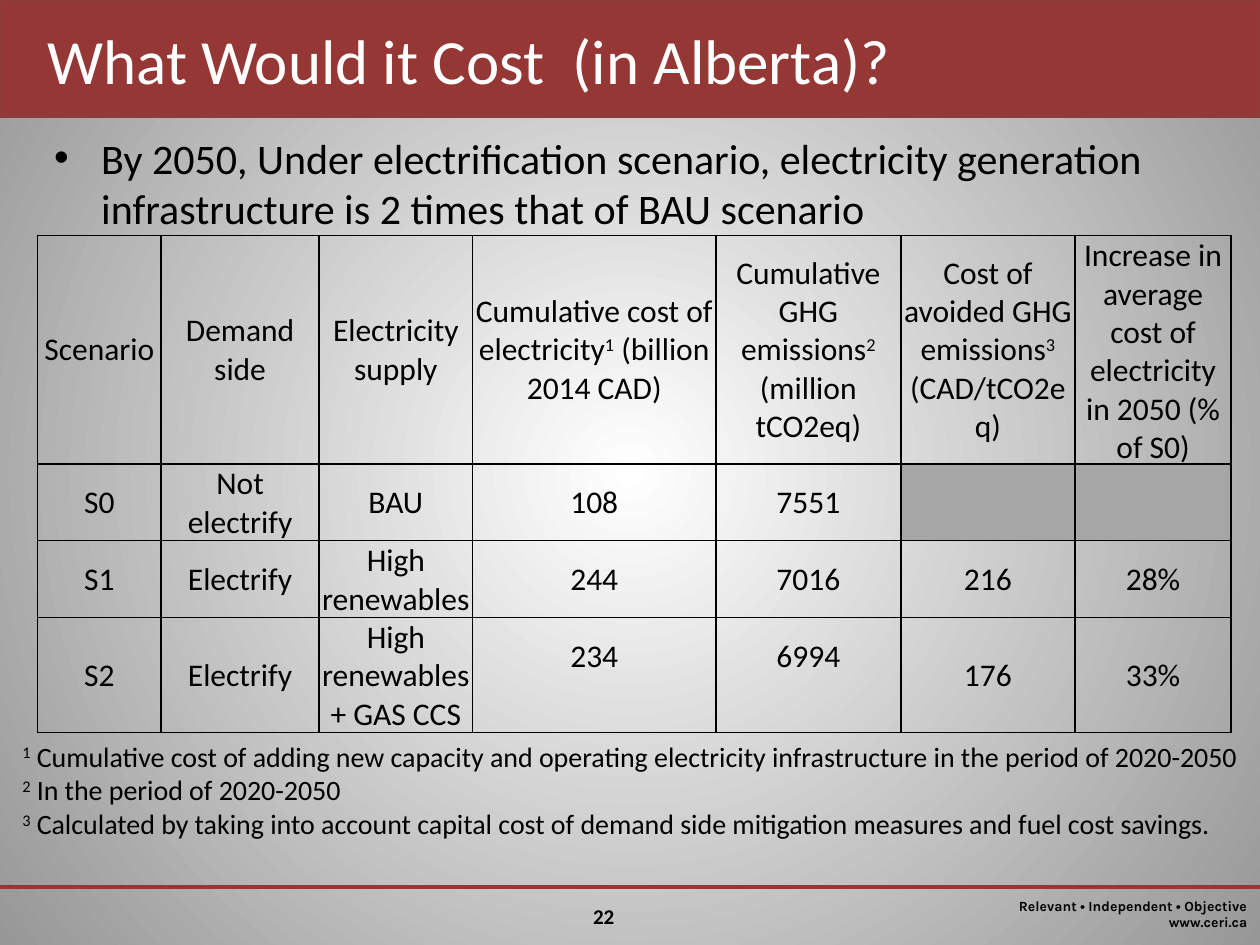
from dataclasses import dataclass
from typing import Optional

from lxml.etree import SubElement
from pptx import Presentation
from pptx.dml.color import RGBColor
from pptx.enum.shapes import MSO_CONNECTOR as CONN, MSO_SHAPE as SHAPE
from pptx.enum.text import MSO_ANCHOR as ANCHOR, MSO_AUTO_SIZE as AUTO, PP_ALIGN as ALIGN
from pptx.oxml import parse_xml
from pptx.oxml.ns import nsdecls, qn
from pptx.util import Cm, Pt

RED = RGBColor(0x95, 0x37, 0x35)
RED_EDGE = RGBColor(0x8E, 0x3B, 0x39)
BLACK = RGBColor(0, 0, 0)
WHITE = RGBColor(0xFF, 0xFF, 0xFF)
GRAY = RGBColor(0xA6, 0xA6, 0xA6)
BG_EDGE = RGBColor(0x97, 0x97, 0x97)

COL_WIDTHS = [2.49, 3.18, 3.1, 4.9, 3.73, 3.51, 3.15]
ROW_HEIGHTS = [4.6, 1.55, 1.55, 2.32]
ROWS = [
    ["Scenario", "Demand side", "Electricity supply",
     "Cumulative cost of electricity^1^ (billion 2014 CAD)",
     "Cumulative GHG emissions^2^ (million tCO2eq)",
     "Cost of avoided GHG emissions^3^ (CAD/tCO2eq)",
     "Increase in average cost of electricity in 2050 (% of S0)"],
    ["S0", "Not electrify", "BAU", "108", "7551", "", ""],
    ["S1", "Electrify", "High renewables", "244", "7016", "216", "28%"],
    ["S2", "Electrify", "High renewables + GAS CCS", "234", "6994", "176", "33%"],
]
RAISED = {"234", "6994"}


@dataclass
class TextBox:
    text: str
    left: float
    top: float
    width: float
    height: float
    size: float
    color: RGBColor = BLACK
    font: str = "Calibri"
    bold: bool = False
    align: Optional[ALIGN] = None
    anchor: ANCHOR = ANCHOR.TOP
    wrap: bool = True
    grow: bool = False
    bullet: bool = False


FOOTER = [
    TextBox("Relevant • Independent • Objective\nwww.ceri.ca", 19.71, 17.96, 5.69, 0.94,
            8, font="Karla", bold=True, align=ALIGN.RIGHT, wrap=False, grow=True),
    TextBox("22", 10.8, 18.08, 2.74, 0.76, 12, bold=True, align=ALIGN.CENTER, grow=True),
]
BODY = TextBox(
    "By 2050, Under electrification scenario, electricity generation "
    "infrastructure is 2 times that of BAU scenario",
    0.84, 2.54, 22.86, 2.74, 24, bullet=True)
TITLE = TextBox("What Would it Cost  (in Alberta)?", 0.71, -0.08, 23.06, 2.54, 36,
                color=WHITE, anchor=ANCHOR.MIDDLE)
NOTES = TextBox(
    "^1^ Cumulative cost of adding new capacity and operating electricity "
    "infrastructure in the period of 2020-2050\n"
    "^2^ In the period of 2020-2050\n"
    "^3^ Calculated by taking into account capital cost of demand side "
    "mitigation measures and fuel cost savings.",
    0.2, 14.78, 25.2, 2.31, 16, grow=True)


def fill_text(tf, text: str, size: float, color: RGBColor = BLACK,
              font: str = "Calibri", bold: bool = False, align=None) -> None:
    for i, line in enumerate(text.split("\n")):
        p = tf.add_paragraph() if i else tf.paragraphs[0]
        p.alignment = align
        for j, part in enumerate(line.split("^")):
            if not part:
                continue
            r = p.add_run()
            r.text = part
            r.font.size, r.font.name, r.font.bold = Pt(size), font, bold
            r.font.color.rgb = color
            if j % 2:
                r.font._element.set("baseline", "30000")


def add_text(s, box: TextBox) -> None:
    sp = s.shapes.add_textbox(Cm(box.left), Cm(box.top), Cm(box.width), Cm(box.height))
    tf = sp.text_frame
    tf.word_wrap = box.wrap
    tf.vertical_anchor = box.anchor
    tf.auto_size = AUTO.SHAPE_TO_FIT_TEXT if box.grow else AUTO.NONE
    if box.bullet:
        pPr = tf.paragraphs[0]._p.get_or_add_pPr()
        pPr.set("marL", str(Cm(0.95)))
        pPr.set("indent", str(-Cm(0.95)))
        SubElement(pPr, qn("a:buFont")).set("typeface", "Arial")
        SubElement(pPr, qn("a:buChar")).set("char", "•")
    fill_text(tf, box.text, box.size, box.color, box.font, box.bold, box.align)


def add_background(s) -> None:
    s.background.fill.solid()
    solid = s.element.find(".//" + qn("p:bgPr")).find(qn("a:solidFill"))
    solid.getparent().replace(solid, parse_xml(
        f'<a:gradFill {nsdecls("a")} rotWithShape="1"><a:gsLst>'
        f'<a:gs pos="0"><a:srgbClr val="{WHITE}"/></a:gs>'
        f'<a:gs pos="100000"><a:srgbClr val="{BG_EDGE}"/></a:gs></a:gsLst>'
        '<a:path path="circle"><a:fillToRect l="50000" t="50000" r="50000" b="50000"/>'
        '</a:path></a:gradFill>'))


def add_band(s) -> None:
    sp = s.shapes.add_shape(SHAPE.RECTANGLE, 0, 0, Cm(25.4), Cm(2.34))
    sp.shadow.inherit = False
    sp.fill.solid()
    sp.fill.fore_color.rgb = RED
    sp.line.color.rgb = RED_EDGE
    sp.line.width = Pt(2)


def add_rule(s) -> None:
    line = s.shapes.add_connector(CONN.STRAIGHT, 0, Cm(17.88), Cm(25.4), Cm(17.88))
    line.line.color.rgb = RED
    line.line.width = Pt(2.25)
    SubElement(line._element.spPr, qn("a:effectLst"))


def format_cell(cell, text: str) -> None:
    tcPr = cell._tc.get_or_add_tcPr()
    for side in "LRTB":
        tcPr.append(parse_xml(
            f'<a:ln{side} {nsdecls("a")} w="{Pt(1)}"><a:solidFill>'
            f'<a:srgbClr val="{BLACK}"/></a:solidFill></a:ln{side}>'))
    cell.margin_left = cell.margin_right = cell.margin_top = Cm(0.02)
    cell.margin_bottom = Cm(0.76) if text in RAISED else 0
    cell.vertical_anchor = ANCHOR.MIDDLE
    if text:
        cell.fill.background()
        fill_text(cell.text_frame, text, 18, align=ALIGN.CENTER)
    else:
        cell.fill.solid()
        cell.fill.fore_color.rgb = GRAY


def add_cost_table(s) -> None:
    table = s.shapes.add_table(len(ROWS), len(COL_WIDTHS), Cm(0.76), Cm(4.75),
                               Cm(sum(COL_WIDTHS)), Cm(sum(ROW_HEIGHTS))).table
    table.first_row = table.horz_banding = False
    for col, width in zip(table.columns, COL_WIDTHS):
        col.width = Cm(width)
    for row, height, texts in zip(table.rows, ROW_HEIGHTS, ROWS):
        row.height = Cm(height)
        for cell, text in zip(row.cells, texts):
            format_cell(cell, text)


def main() -> None:
    prs = Presentation()
    prs.slide_width, prs.slide_height = Cm(25.4), Cm(19.05)
    s = prs.slides.add_slide(prs.slide_layouts[6])
    add_background(s)
    add_band(s)
    add_rule(s)
    for box in FOOTER:
        add_text(s, box)
    add_text(s, BODY)
    add_cost_table(s)
    add_text(s, TITLE)
    add_text(s, NOTES)
    prs.save("out.pptx")


if __name__ == "__main__":
    main()
